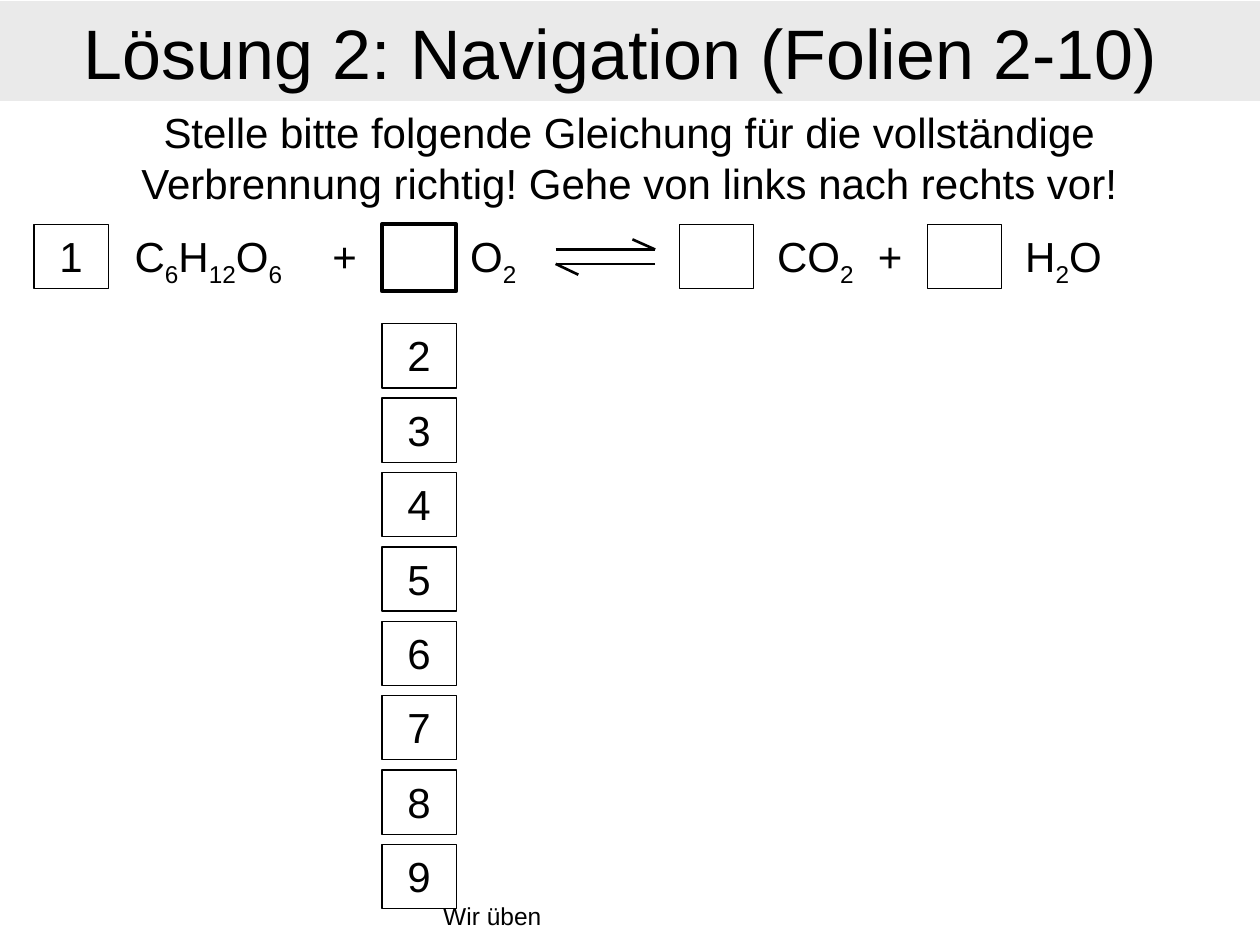
from pptx import Presentation
from pptx.dml.color import RGBColor
from pptx.enum import shapes, text
from pptx.oxml import parse_xml
from pptx.oxml.ns import nsdecls
from pptx.util import Pt

BLACK = RGBColor(0, 0, 0)
GREY = RGBColor(0xEA, 0xEA, 0xEA)
CENTER = text.PP_ALIGN.CENTER
CELL = 42.5
BOX_HEIGHT = 36.7
OXYGEN_LEFT = 218.2


def assign(target, values):
    for name, value in values.items():
        setattr(target, name, value)


def write(shape, content, size=24, align=CENTER, anchor=text.MSO_ANCHOR.TOP,
          fit=text.MSO_AUTO_SIZE.SHAPE_TO_FIT_TEXT):
    frame = shape.text_frame
    assign(frame, {"word_wrap": True, "auto_size": fit, "vertical_anchor": anchor})
    para = frame.paragraphs[0]
    para.alignment = align
    for index, part in enumerate(content.split("_")):
        if not part:
            continue
        span = para.add_run()
        span.text = part
        assign(span.font, {"name": "Arial", "size": Pt(size)})
        span.font.color.rgb = BLACK
        if index % 2:
            span.font._element.set("baseline", "-25000")


def add_label(page, box, content, **options):
    write(page.shapes.add_textbox(*map(Pt, box)), content, **options)


def add_box(page, box, content="", weight=0.75):
    shape = page.shapes.add_shape(shapes.MSO_SHAPE.RECTANGLE, *map(Pt, box))
    shape.shadow.inherit = False
    shape.fill.background()
    shape.line.color.rgb = BLACK
    shape.line.width = Pt(weight)
    if content:
        write(shape, content)


def add_title(page, box, content):
    title = page.shapes.title
    assign(title, dict(zip(("left", "top", "width", "height"), map(Pt, box))))
    title.fill.solid()
    title.fill.fore_color.rgb = GREY
    write(title, content, size=40, anchor=text.MSO_ANCHOR.MIDDLE,
          fit=text.MSO_AUTO_SIZE.NONE)


def add_equilibrium(page, box):
    left, top, width, height = box
    right, bottom = left + width, top + height
    upper, lower, barb = top + 5.8, bottom - 6.2, 13
    group = page.shapes.add_group_shape()
    for ends in ((left, upper, right, upper), (right, upper, right - barb, top),
                 (right, lower, left, lower), (left, lower, left + barb, bottom)):
        line = group.shapes.add_connector(shapes.MSO_CONNECTOR.STRAIGHT, *map(Pt, ends))
        line.line.color.rgb = BLACK
        line.line.width = Pt(1.5)
        line._element.spPr.append(parse_xml(f"<a:effectLst {nsdecls('a')}/>"))


def add_equation(page, box):
    left, top, width, height = box
    for x, content, weight, tall in ((left, "1", 0.75, BOX_HEIGHT),
                                     (OXYGEN_LEFT, "", 2.25, 38.2),
                                     (388.1, "", 0.75, BOX_HEIGHT),
                                     (529.9, "", 0.75, BOX_HEIGHT)):
        add_box(page, (x, top, CELL, tall), content, weight)
    for x, wide, content in ((62.6, 113, "C_6_H_12_O_6"), (175.7, CELL, "+"),
                             (260.6, CELL, "O_2"), (430.6, 70.6, "CO_2"),
                             (487.4, CELL, "+"), (572.4, 70.6, "H_2_O")):
        add_label(page, (x, top, wide, height), content)
    add_equilibrium(page, (317.5, top + 8.6, 56.9, 20.2))


def add_choices(page, box, numbers):
    left, top, width, height = box
    step = height / len(numbers)
    for index, number in enumerate(numbers):
        add_box(page, (left, top + index * step, width, BOX_HEIGHT), str(number))


def main():
    deck = Presentation()
    assign(deck, {"slide_width": Pt(720), "slide_height": Pt(540)})
    page = deck.slides.add_slide(deck.slide_layouts[5])
    add_label(page, (246.2, 511.2, 228.2, 28), "Wir üben", size=14,
              align=text.PP_ALIGN.LEFT)
    add_title(page, (0, 0.7, 720, 56.9), "Lösung 2: Navigation (Folien 2-10) ")
    add_label(page, (19.4, 57.6, 680.4, 64.8),
              "Stelle bitte folgende Gleichung für die vollständige "
              "Verbrennung richtig! Gehe von links nach rechts vor!")
    add_equation(page, (19.4, 128.2, 623.5, 36))
    add_choices(page, (OXYGEN_LEFT, 185, CELL, 8 * CELL), range(2, 10))
    deck.save("out.pptx")


if __name__ == "__main__":
    main()
